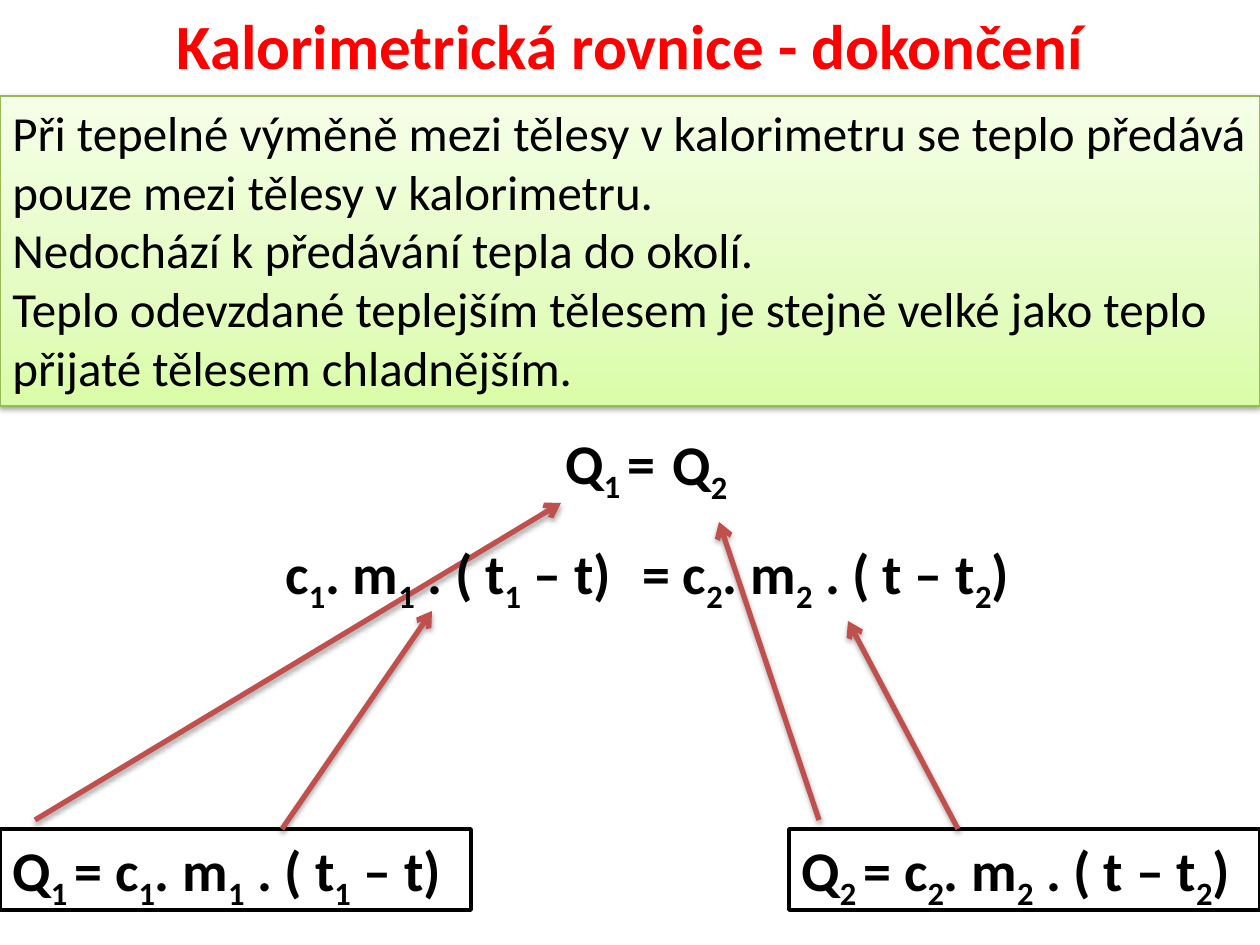
from lxml.etree import SubElement as Sub
from pptx import Presentation
from pptx.dml.color import RGBColor as Rgb
from pptx.enum.shapes import MSO_CONNECTOR as Conn, MSO_SHAPE as Geo
from pptx.enum.text import MSO_ANCHOR as Anchor, MSO_AUTO_SIZE as Fit, PP_ALIGN as Align
from pptx.oxml.ns import qn
from pptx.util import Emu, Pt

SCALE = 914400 / 126
HUES = {"red": "FF0000", "black": "000000", "white": "FFFFFF", "edge": "98B955",
        "arrow": "C0504D", "low": "DAFDA7", "mid": "E4FCC2", "high": "F5FFE7"}
HEAD = {"size": Pt(36), "bold": True}
BODY = {"size": Pt(28), "bold": False}
MATH = {"size": Pt(32), "bold": True}
LEFT = "c|1|. m|1| . ( t|1| – t)"
RIGHT = "= c|2|. m|2| . ( t – t|2|)"


def px(*nums):
    """Turn pixel lengths into EMU."""
    return [Emu(round(n * SCALE)) for n in nums]


def hue(name):
    """Look up a named colour."""
    return Rgb.from_string(HUES[name])


def shade(shape, alpha, dist):
    """Give a shape or connector a soft shadow below it."""
    fx = Sub(shape._element.spPr, qn("a:effectLst"))
    out = Sub(fx, qn("a:outerShdw"), blurRad=str(Pt(3.1)), dist=str(Pt(dist)),
              dir="5400000", rotWithShape="0")
    tint = Sub(out, qn("a:srgbClr"), val=HUES["black"])
    Sub(tint, qn("a:alpha"), val=str(alpha * 1000))


def blend(shape, stops):
    """Fill a shape with a gradient that rises from the bottom."""
    shape.fill.gradient()
    shape.fill.gradient_angle = 90
    grad = shape._element.spPr.find(qn("a:gradFill"))
    items = grad.find(qn("a:gsLst"))
    for old in list(items):
        items.remove(old)
    for pos, name in stops:
        stop = Sub(items, qn("a:gs"), pos=str(pos * 1000))
        Sub(stop, qn("a:srgbClr"), val=HUES[name])


def write(shape, lines, font, ink="black", align=Align.LEFT, wrap=True):
    """Write paragraphs in which every second part between bars is a subscript."""
    frame = shape.text_frame
    form = {"word_wrap": wrap, "auto_size": Fit.SHAPE_TO_FIT_TEXT,
            "vertical_anchor": Anchor.TOP}
    for key, val in form.items():
        setattr(frame, key, val)
    for i, line in enumerate(lines):
        para = frame.add_paragraph() if i else frame.paragraphs[0]
        para.alignment = align
        for j, part in enumerate(line.split("|")):
            run = para.add_run()
            run.text = part
            for key, val in {"name": "Calibri", **font}.items():
                setattr(run.font, key, val)
            run.font.color.rgb = hue(ink)
            if j % 2:
                run._r.get_or_add_rPr().set("baseline", "-25000")


def frame(slide, box, edge, width):
    """Add a white rectangle with a coloured outline."""
    shape = slide.shapes.add_shape(Geo.RECTANGLE, *px(*box))
    shape.fill.solid()
    shape.fill.fore_color.rgb = hue("white")
    shape.line.color.rgb = hue(edge)
    shape.line.width = Pt(width)
    return shape


def title(slide, box):
    """Place the centred heading."""
    text = slide.shapes.add_textbox(*px(*box))
    write(text, ["Kalorimetrická rovnice - dokončení"], HEAD, "red", Align.CENTER)


def note(slide, box):
    """Place the green panel with the explanation."""
    panel = frame(slide, box, "edge", 0.75)
    blend(panel, [(0, "low"), (35, "mid"), (100, "high")])
    shade(panel, 38, 1.6)
    write(panel, [
        "Při tepelné výměně mezi tělesy v kalorimetru se teplo předává "
        "pouze mezi tělesy v kalorimetru.",
        "Nedochází k předávání tepla do okolí.",
        "Teplo odevzdané teplejším tělesem je stejně velké jako teplo "
        "přijaté tělesem chladnějším."], BODY)


def heats(slide, box):
    """Place the two framed formulas at both ends of the box."""
    x, y, w, h = box
    wide = 471
    for left, text in ((x, "Q|1 |= " + LEFT), (x + w - wide, "Q|2 |" + RIGHT)):
        shape = frame(slide, (left, y, wide, h), "black", 2)
        shape.shadow.inherit = False
        write(shape, [text], MATH)


def links(slide, box):
    """Draw the arrows from the formulas up to the equation."""
    x, y = box[:2]
    ends = [(35, 317, 561, 0), (819, 317, 719, 19),
            (282, 326, 432, 108), (958, 326, 848, 118)]
    for a, b, c, d in ends:
        link = slide.shapes.add_connector(
            Conn.STRAIGHT, *px(x + a, y + b, x + c, y + d))
        link.line.color.rgb = hue("arrow")
        link.line.width = Pt(3)
        Sub(link.line._get_or_add_ln(), qn("a:tailEnd"), type="arrow")
        shade(link, 35, 1.8)


def balance(slide, box):
    """Place the short equation and its expanded form below."""
    x, y = box[:2]
    parts = [(280, 0, 134, "Q|1 |=", False), (387, 1, 83, "Q|2", False),
             (0, 110, 387, LEFT, True), (357, 110, 403, RIGHT, True)]
    for dx, dy, wide, text, wrap in parts:
        shape = slide.shapes.add_textbox(*px(x + dx, y + dy, wide, 81))
        write(shape, [text], MATH, wrap=wrap)


def main():
    """Build the slide and save it."""
    deck = Presentation()
    deck.slide_width, deck.slide_height = px(1260, 945)
    slide = deck.slides.add_slide(deck.slide_layouts[6])
    title(slide, (0, 0, 1260, 89))
    note(slide, (0, 96, 1260, 310))
    heats(slide, (0, 829, 1260, 81))
    links(slide, (0, 503, 1260, 326))
    balance(slide, (273, 422, 760, 191))
    deck.save("out.pptx")


if __name__ == "__main__":
    main()
